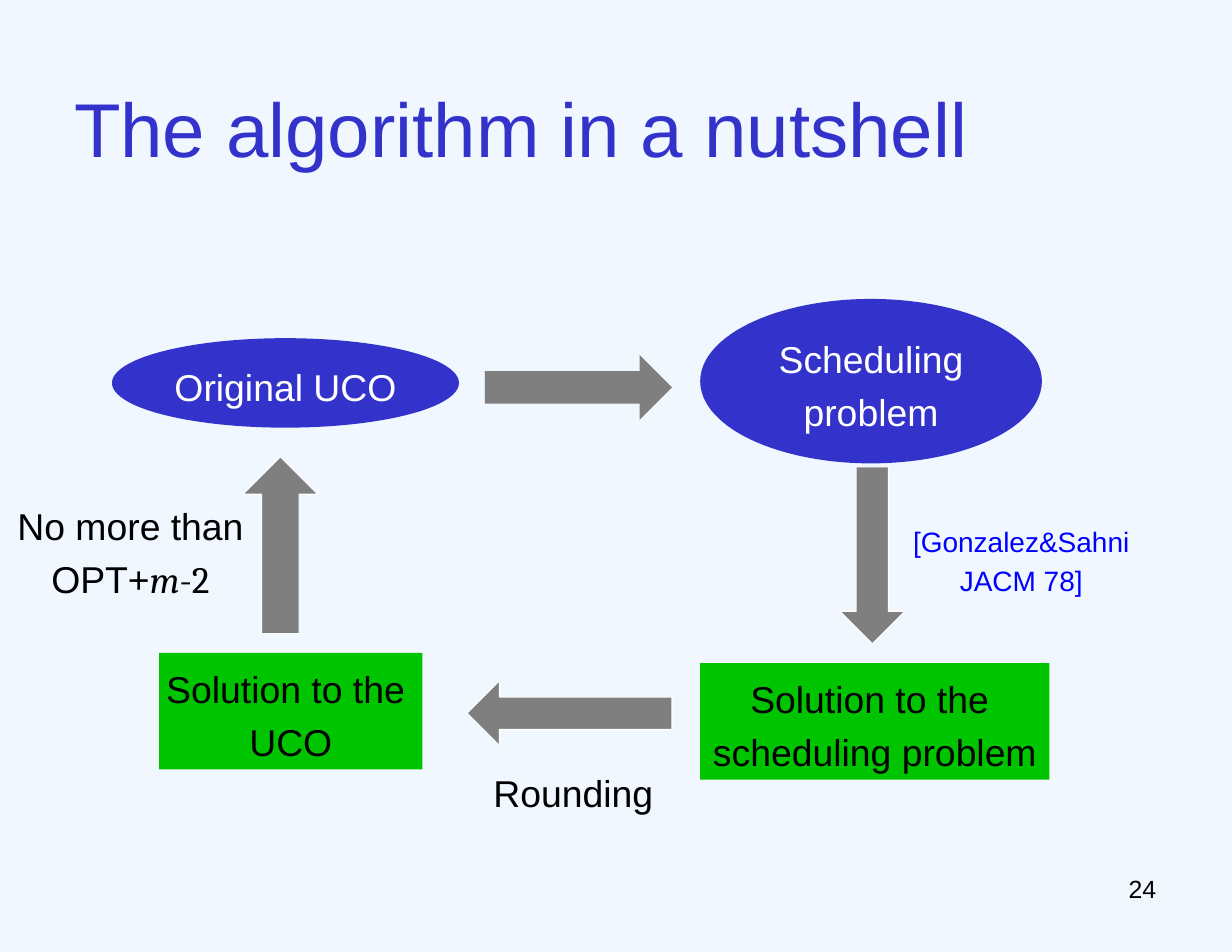
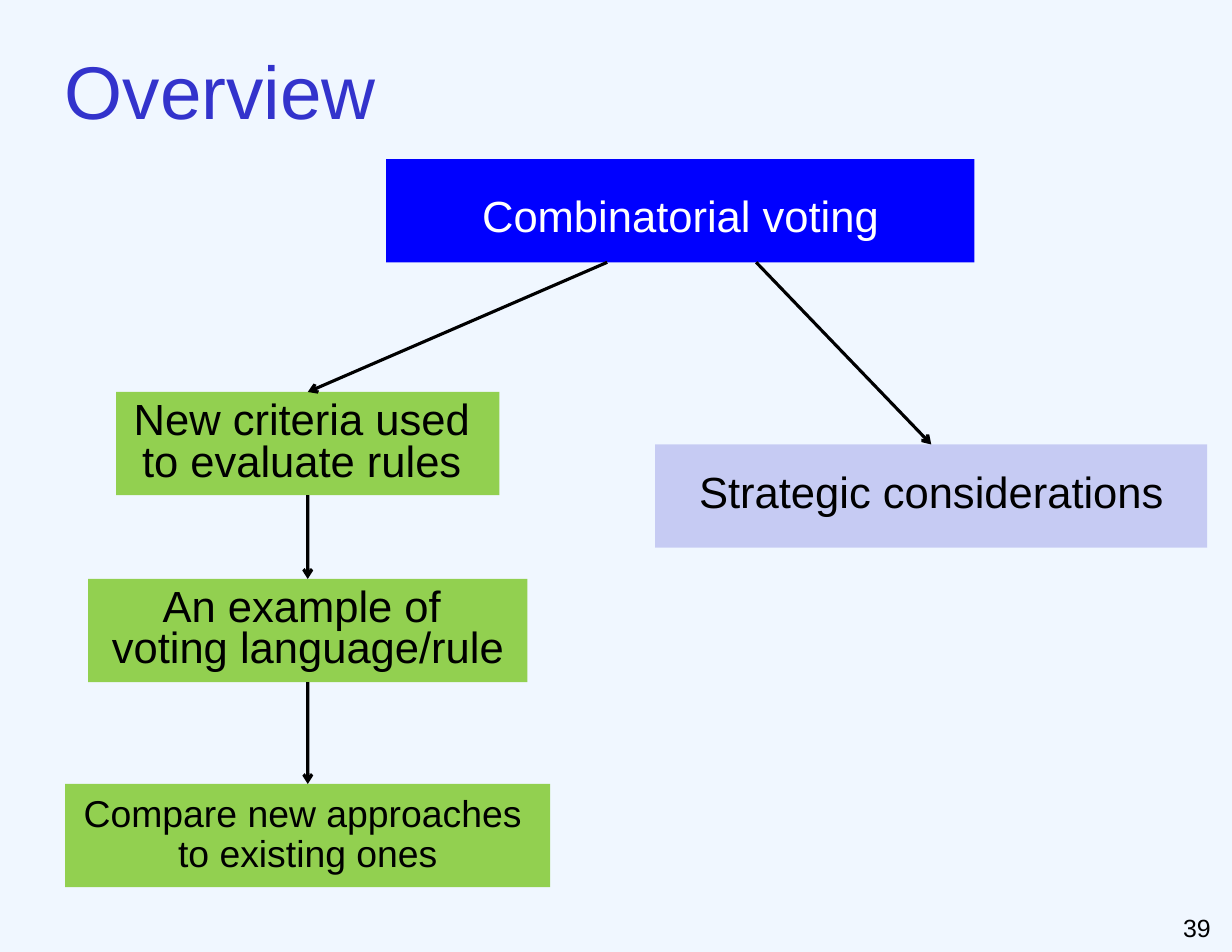
from lxml.etree import SubElement
from pptx import Presentation
from pptx.dml.color import RGBColor
from pptx.enum.shapes import MSO_CONNECTOR, MSO_SHAPE
from pptx.enum.text import MSO_ANCHOR, MSO_AUTO_SIZE, PP_ALIGN
from pptx.oxml.ns import qn
from pptx.util import Cm, Pt

COLORS = {
    "back": "F0F7FF",
    "indigo": "3333CC",
    "green": "00C400",
    "lime": "92D050",
    "blue": "0000FF",
    "gray": "7F7F7F",
    "black": "000000",
    "white": "FFFFFF",
}
FONT = "Arial"
MATH = "Cambria"
TITLE_ONLY = 5
BOX_H = 2.34


def rgb(name):
    return RGBColor.from_string(COLORS[name])


def style(run, size, color, font=FONT):
    run.font.size = Pt(size)
    run.font.name = font
    run.font.color.rgb = rgb(color)


def write(frame, lines, size, color, space=1.18, align=PP_ALIGN.CENTER,
          anchor=MSO_ANCHOR.MIDDLE, wrap=False):
    """Fill a text frame with one styled paragraph per line."""
    frame.text = "\n".join(lines)
    frame.auto_size = MSO_AUTO_SIZE.NONE
    frame.word_wrap = wrap
    frame.vertical_anchor = anchor
    for para in frame.paragraphs:
        para.alignment = align
        para.line_spacing = space
        for run in para.runs:
            style(run, size, color)


def pad(frame):
    """Set the margins shared by titles and page numbers."""
    frame.margin_left = frame.margin_right = Cm(0.28)
    frame.margin_top = frame.margin_bottom = Cm(0.15)


def add_block(slide, kind, box, fill, line=None):
    shape = slide.shapes.add_shape(kind, *map(Cm, box))
    shape.shadow.inherit = False
    shape.fill.solid()
    shape.fill.fore_color.rgb = rgb(fill)
    if line:
        shape.line.color.rgb = rgb(line)
        shape.line.width = Pt(0.75)
    else:
        shape.line.fill.background()
    return shape


def add_label(slide, box, lines, size, color, wrap=True):
    frame = slide.shapes.add_textbox(*map(Cm, box)).text_frame
    write(frame, lines, size, color, anchor=MSO_ANCHOR.TOP, wrap=wrap)
    return frame


def add_link(slide, start, target, site=None):
    """Draw an arrow to the top of target, from a point or a shape's site."""
    link = slide.shapes.add_connector(MSO_CONNECTOR.STRAIGHT, 0, 0, 0, 0)
    if site is None:
        link.begin_x, link.begin_y = map(Cm, start)
    else:
        link.begin_connect(start, site)
    link.end_connect(target, 0)
    link.line.color.rgb = rgb("black")
    link.line.width = Pt(2)
    props = link._element.spPr
    SubElement(props.find(qn("a:ln")), qn("a:tailEnd"), type="arrow")
    SubElement(props, qn("a:effectLst"))


def add_page(deck, title, box, size, number, corner):
    """Add a slide with its title in box and its number at corner."""
    slide = deck.slides.add_slide(deck.slide_layouts[TITLE_ONLY])
    head = slide.shapes.title
    head.left, head.top, head.width, head.height = map(Cm, box)
    write(head.text_frame, [title], size, "indigo", 1.24, PP_ALIGN.LEFT, wrap=True)
    pad(head.text_frame)
    foot = slide.shapes.add_textbox(*map(Cm, (*corner, 6.48, 1.47))).text_frame
    write(foot, [number], 16, "black", 1, PP_ALIGN.RIGHT, MSO_ANCHOR.TOP, True)
    pad(foot)
    return slide


def draw_cycle(slide, x, y):
    def place(left, top, width, height):
        return x + left, y + top, width, height

    oval, rect = MSO_SHAPE.OVAL, MSO_SHAPE.RECTANGLE
    nodes = [
        (oval, (2.54, 0.89, 7.87, 2.03), "indigo", "white", ["Original UCO"]),
        (oval, (15.88, 0, 7.75, 3.73), "indigo", "white", ["Scheduling problem"]),
        (rect, (15.88, 8.26, 7.92, 2.64), "green", "black",
         ["Solution to the ", "scheduling problem"]),
        (rect, (3.61, 8.03, 5.97, 2.64), "green", "black",
         ["Solution to the ", "UCO"]),
    ]
    for kind, box, fill, ink, lines in nodes:
        node = add_block(slide, kind, place(*box), fill)
        wrap = lines == ["Scheduling problem"]
        write(node.text_frame, lines, 24, ink, wrap=wrap)

    arrows = [
        (MSO_SHAPE.RIGHT_ARROW, (11, 1.27, 4.24, 1.47), None),
        (MSO_SHAPE.LEFT_ARROW, (10.59, 8.66, 4.65, 1.47), "white"),
        (MSO_SHAPE.DOWN_ARROW, (19.05, 3.81, 1.47, 4.01), "white"),
        (MSO_SHAPE.UP_ARROW, (5.51, 3.58, 1.7, 4.01), "white"),
    ]
    for kind, box, line in arrows:
        add_block(slide, kind, place(*box), "gray", line)

    add_label(slide, place(20.52, 4.85, 5.46, 2.06),
              ["[Gonzalez&Sahni ", "JACM 78] "], 18, "blue", wrap=False)
    add_label(slide, place(9.09, 10.37, 7.82, 1.45), ["Rounding"], 24, "black")
    bound = add_label(slide, place(0, 4.32, 5.92, 2.64),
                      ["No more than", "OPT+"], 24, "black")
    for text in ("m", "-2"):
        run = bound.paragraphs[1].add_run()
        run.text = text
        style(run, 24, "black", MATH)
        run.font.italic = text == "m"


def draw_tree(slide, x, y):
    def add_box(left, top, width, fill, lines, size=28, ink="black", space=0.8):
        box = (x + left, y + top, width, BOX_H)
        shape = add_block(slide, MSO_SHAPE.RECTANGLE, box, fill)
        write(shape.text_frame, lines, size, ink, space)
        return shape

    add_box(7.28, 0, 13.34, "blue", ["Combinatorial voting"], ink="white", space=1.18)
    steps = [
        (5.28, 8.69, 28, 0.8, ["New criteria used ", "to evaluate rules "]),
        (9.52, 9.96, 28, 0.8, ["An example of ", "voting language/rule"]),
        (14.17, 11, 24, 0.9, ["Compare new approaches ", "to existing ones"]),
    ]
    mid = 5.5
    chain = [add_box(mid - width / 2, top, width, "lime", lines, size, space=space)
             for top, width, size, space, lines in steps]
    side = add_box(13.38, 6.47, 12.52, "indigo", ["Strategic considerations"])
    tint = side._element.spPr.find(qn("a:solidFill"))[0]
    SubElement(tint, qn("a:alpha"), val="22000")

    add_link(slide, (x + 12.29, y + BOX_H), chain[0])
    add_link(slide, (x + 15.67, y + BOX_H), side)
    for upper, lower in zip(chain, chain[1:]):
        add_link(slide, upper, lower, 2)


def main():
    deck = Presentation()
    deck.slide_width, deck.slide_height = Cm(27.94), Cm(21.59)
    back = deck.slide_master.background.fill
    back.solid()
    back.fore_color.rgb = rgb("back")

    slide = add_page(deck, "The algorithm in a nutshell", (1.4, 0.86, 25.1, 3.56),
                     49, "24", (20.02, 19.66))
    draw_cycle(slide, 0, 6.78)
    slide = add_page(deck, "Overview", (1.19, 0, 9.3, 3.56), 48, "39", (21.26, 20.55))
    draw_tree(slide, 1.48, 3.61)
    deck.save("out.pptx")


if __name__ == "__main__":
    main()
